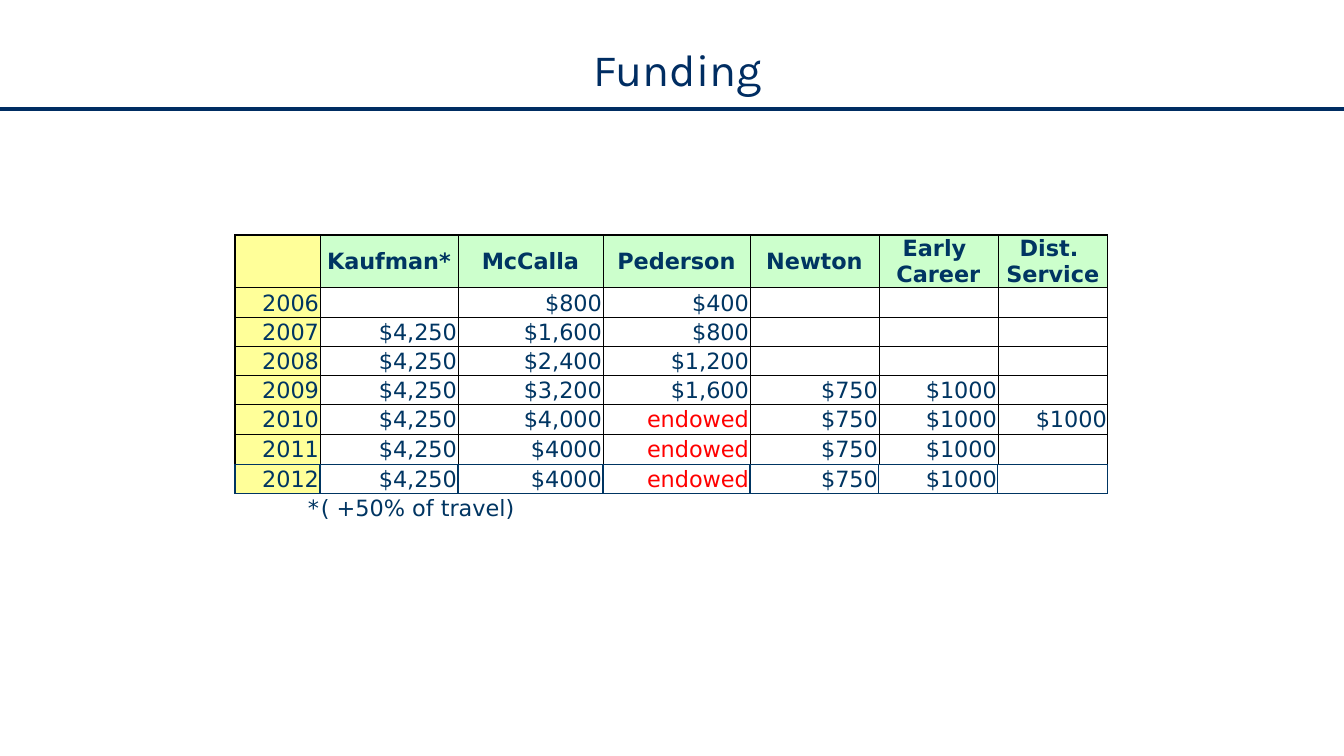
"""Build the Funding slide: a ruled title above a table of awards by year."""
from lxml.etree import SubElement
from pptx import Presentation
from pptx.dml.color import RGBColor
from pptx.enum.shapes import MSO_CONNECTOR as LINK
from pptx.enum.text import MSO_ANCHOR as ANCHOR, PP_ALIGN as ALIGN
from pptx.oxml.ns import qn
from pptx.util import Pt

PX = 9071.43
NAVY, INK, BLACK, RED = "002D62", "003562", "000000", "FF0000"
YELLOW, GREEN = "FFFF99", "CCFFCC"


def put(frame, text, font="DejaVu Sans", size=16, color=INK, bold=False, align=ALIGN.RIGHT):
    for i, part in enumerate(text.split("\n")):
        para = frame.add_paragraph() if i else frame.paragraphs[0]
        para.alignment = align
        if part:
            run = para.add_run()
            run.text = part
            run.font.name, run.font.size, run.font.bold = font, Pt(size), bold
            run.font.color.rgb = RGBColor.from_string(color)
        else:
            SubElement(para._p, qn("a:endParaRPr"), sz=str(size * 100))


def edge(props, side, rule):
    width, color = rule or (0, None)
    line = SubElement(props, qn(f"a:ln{side}"), w=str(int(Pt(width))))
    if rule:
        fill = SubElement(line, qn("a:solidFill"))
        SubElement(fill, qn("a:srgbClr"), val=color)
    else:
        SubElement(line, qn("a:noFill"))


deck = Presentation()
deck.slide_width, deck.slide_height = round(1344 * PX), round(756 * PX)
slide = deck.slides.add_slide(deck.slide_layouts[5])

rule = slide.shapes.add_connector(LINK.STRAIGHT, 0, round(109 * PX), deck.slide_width, round(109 * PX))
rule.line.color.rgb = RGBColor.from_string(NAVY)
rule.line.width = Pt(3)
SubElement(rule._element.spPr, qn("a:effectLst"))

title = slide.shapes.title
title.left, title.top, title.width, title.height = [round(n * PX) for n in (219, 8, 907, 121)]
title.text_frame.vertical_anchor = ANCHOR.MIDDLE
put(title.text_frame, " Funding", font="Karla", size=32, color=NAVY, align=ALIGN.CENTER)

data = [
    ["", "Kaufman*", "McCalla", "Pederson", "Newton", "Early \nCareer", "Dist. \nService"],
    ["2006", "", "$800", "$400", "", "", ""],
    ["2007", "$4,250", "$1,600", "$800", "", "", ""],
    ["2008", "$4,250", "$2,400", "$1,200", "", "", ""],
    ["2009", "$4,250", "$3,200", "$1,600", "$750", "$1000", ""],
    ["2010", "$4,250", "$4,000", "endowed", "$750", "$1000", "$1000"],
    ["2011", "$4,250", "$4000", "endowed", "$750", "$1000", ""],
    ["2012", "$4,250", "$4000", "endowed", "$750", "$1000", ""],
    ["*", "( +50% of travel)", "", "", "", "", ""],
]
widths = [85, 138, 145, 147, 129, 119, 110]
heights = [52, 30, 29, 29, 29, 30, 30, 29, 29]
thin, thick, blue = (0.5, BLACK), (1, BLACK), (1, INK)
levels = [thick] + [thin] * 5 + [thick, blue, blue, None]
note = len(data) - 1
last = len(widths) - 1

box = [round(n * PX) for n in (235, 235, sum(widths), sum(heights))]
table = slide.shapes.add_table(len(data), len(widths), *box).table
table.first_row = table.horz_banding = False
for col, width in zip(table.columns, widths):
    col.width = round(width * PX)
for row, height in zip(table.rows, heights):
    row.height = round(height * PX)
table.cell(note, 1).merge(table.cell(note, 2))

for r, row in enumerate(data):
    for c, text in enumerate(row):
        cell = table.cell(r, c)
        cell.margin_left = cell.margin_right = cell.margin_top = round(PX)
        cell.margin_bottom = 0
        cell.vertical_anchor = ANCHOR.MIDDLE
        align = ALIGN.CENTER if r == 0 else ALIGN.LEFT if r == note and c else ALIGN.RIGHT
        put(cell.text_frame, text, color=RED if text == "endowed" else INK, bold=r == 0, align=align)

        if r == note:
            left = right = None
        elif r == note - 1:
            left = right = blue
        else:
            left = thick if c == 0 else thin
            right = thick if c == last else thin
        props = cell._tc.get_or_add_tcPr()
        for side, style in zip("LRTB", (left, right, levels[r], levels[r + 1])):
            edge(props, side, style)

        fill = YELLOW if c == 0 else GREEN if r == 0 else None
        if fill and r < note:
            cell.fill.solid()
            cell.fill.fore_color.rgb = RGBColor.from_string(fill)
        else:
            cell.fill.background()

deck.save("out.pptx")
